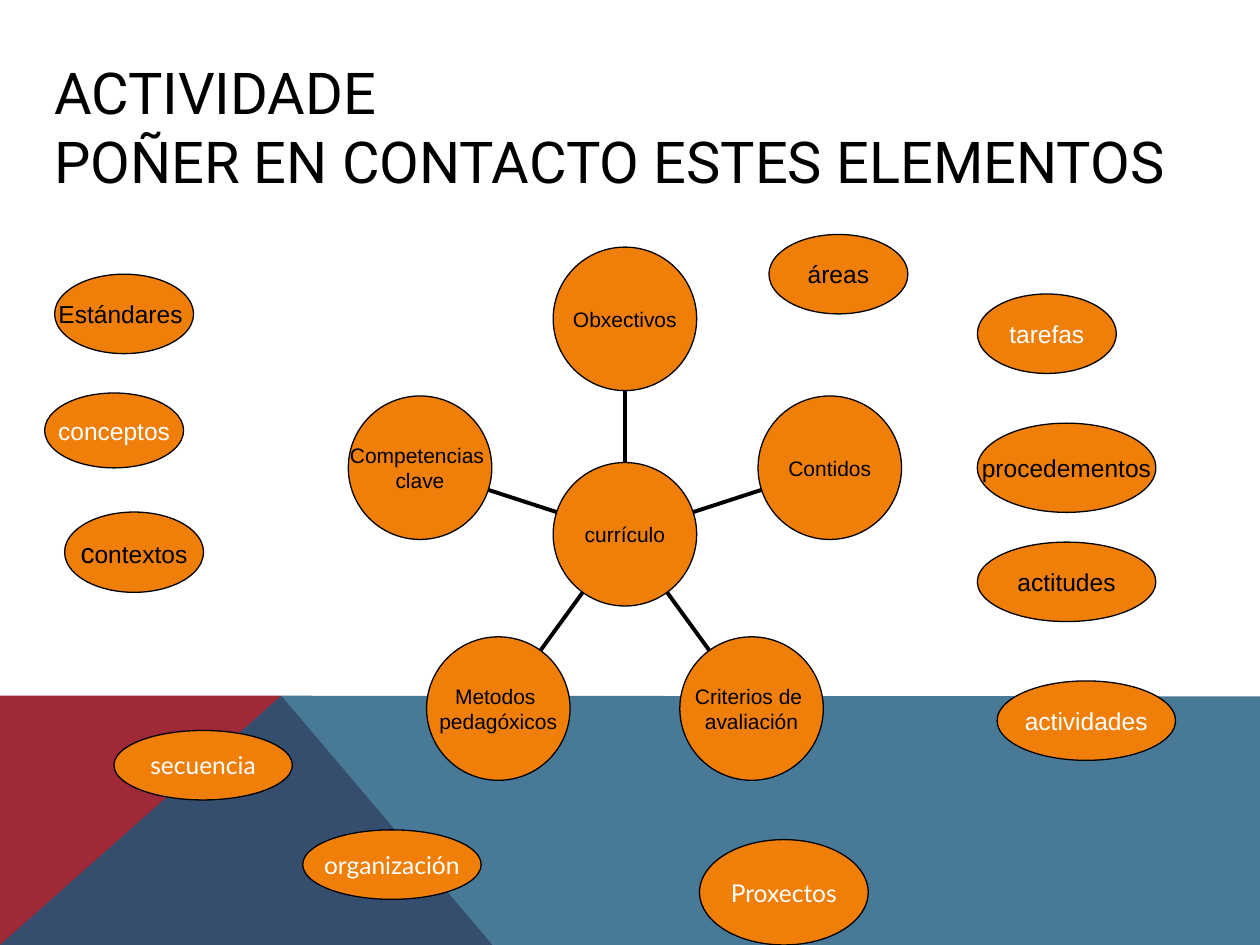
"""Build a slide of curriculum elements to be linked around a central hub."""
from dataclasses import dataclass
from math import cos, radians, sin

from lxml.etree import SubElement
from pptx import Presentation
from pptx.dml.color import RGBColor
from pptx.enum.shapes import MSO_CONNECTOR as CONN, MSO_SHAPE as SHAPE
from pptx.enum.text import MSO_ANCHOR as ANCHOR, PP_ALIGN as ALIGN
from pptx.oxml.ns import qn
from pptx.util import Pt

BLACK, WHITE, ORANGE = "000000", "FFFFFF", "F07F09"
HUB_X, HUB_Y, DIAMETER, ORBIT = 357.1, 305.3, 82, 123.1


@dataclass
class Oval:
    x: float
    y: float
    w: float
    h: float
    lines: tuple
    size: float = 14
    color: str = BLACK
    font: str = "Arial"
    inset: float = 3.6
    first_size: float = 0


@dataclass
class Band:
    points: list
    color: str
    alpha: int = 100


BANDS = [
    Band([(0, 540), (0, 397.6), (160.7, 397.6), (281.4, 540)], "9F2936"),
    Band([(0, 540), (160.7, 397.6), (720, 398), (720, 540)], "1B587C", 80),
]
SATELLITES = [
    ("Obxectivos",),
    ("Contidos",),
    ("Criterios de ", "avaliación"),
    ("Metodos ", "pedagóxicos"),
    ("Competencias ", "clave"),
]
OVALS = [
    Oval(558.5, 241.8, 102, 51, ("procedementos",)),
    Oval(558.5, 309.8, 102, 45.4, ("actitudes",)),
    Oval(36.9, 292.6, 79.4, 45.9, ("contextos",), first_size=16),
    Oval(31.2, 156.7, 79.4, 45.4, ("Estándares ",)),
    Oval(439.4, 134, 79.4, 45.4, ("áreas",)),
    Oval(25.5, 224.6, 79.4, 42.8, ("conceptos",), color=WHITE),
    Oval(558.5, 168, 79.4, 45.4, ("tarefas",), color=WHITE),
    Oval(569.8, 389.1, 102, 45.4, ("actividades",), color=WHITE),
    Oval(65.1, 417.4, 102, 39.7, ("secuencia",), color=WHITE, font="Lato"),
    Oval(173, 474.2, 102, 39.7, ("organización",), color=WHITE, font="Lato"),
    Oval(399.7, 479.8, 96.4, 60.2, ("Proxectos",), color=WHITE, font="Lato"),
]


def rgb(value: str) -> RGBColor:
    return RGBColor.from_string(value)


def apply(target, formats: dict) -> None:
    for name, value in formats.items():
        setattr(target, name, value)


def paint(sp, color: str) -> None:
    sp.shadow.inherit = False
    sp.fill.solid()
    sp.fill.fore_color.rgb = rgb(color)


def add_run(p, text: str, size: float, color: str, font: str) -> None:
    r = p.add_run()
    r.text = text
    apply(r.font, {"size": Pt(size), "name": font})
    r.font.color.rgb = rgb(color)


def add_band(s, band: Band) -> None:
    fb = s.shapes.build_freeform(*map(Pt, band.points[0]), scale=1.0)
    fb.add_line_segments([(Pt(x), Pt(y)) for x, y in band.points[1:]])
    sp = fb.convert_to_shape()
    paint(sp, band.color)
    sp.line.fill.background()
    if band.alpha < 100:
        clr = sp.fill._xPr.find(".//" + qn("a:srgbClr"))
        SubElement(clr, qn("a:alpha")).set("val", str(band.alpha * 1000))


def add_title(s, lines: tuple) -> None:
    tf = s.shapes.add_textbox(Pt(23.8), Pt(18), Pt(672.5), Pt(108)).text_frame
    apply(tf, {"word_wrap": True, "vertical_anchor": ANCHOR.MIDDLE})
    for i, line in enumerate(lines):
        p = tf.add_paragraph() if i else tf.paragraphs[0]
        add_run(p, line, 33, BLACK, "Roboto")


def add_spoke(s, dx: float, dy: float) -> None:
    inner, outer = DIAMETER / 2, ORBIT - DIAMETER / 2
    ends = [(HUB_X + d * dx, HUB_Y + d * dy) for d in (inner, outer)]
    line = s.shapes.add_connector(CONN.STRAIGHT, *(Pt(v) for end in ends for v in end))
    line.line.width = Pt(2.25)
    line.line.color.rgb = rgb(BLACK)
    SubElement(line._element.spPr, qn("a:effectLst"))


def add_oval(s, oval: Oval) -> None:
    sp = s.shapes.add_shape(SHAPE.OVAL, Pt(oval.x), Pt(oval.y), Pt(oval.w), Pt(oval.h))
    paint(sp, ORANGE)
    sp.line.width = Pt(0.75)
    sp.line.color.rgb = rgb(BLACK)
    tf = sp.text_frame
    apply(tf, {"word_wrap": False, "vertical_anchor": ANCHOR.MIDDLE,
               "margin_left": Pt(2 * oval.inset), "margin_right": Pt(2 * oval.inset),
               "margin_top": Pt(oval.inset), "margin_bottom": Pt(oval.inset)})
    for i, line in enumerate(oval.lines):
        p = tf.add_paragraph() if i else tf.paragraphs[0]
        p.alignment = ALIGN.CENTER
        if oval.first_size:
            add_run(p, line[0], oval.first_size, oval.color, oval.font)
            line = line[1:]
        add_run(p, line, oval.size, oval.color, oval.font)


def add_circle(s, cx: float, cy: float, lines: tuple) -> None:
    r = DIAMETER / 2
    add_oval(s, Oval(cx - r, cy - r, DIAMETER, DIAMETER, lines, size=12, inset=0))


def main() -> None:
    prs = Presentation()
    apply(prs, {"slide_width": Pt(720), "slide_height": Pt(540)})
    s = prs.slides.add_slide(prs.slide_layouts[6])
    for band in BANDS:
        add_band(s, band)
    add_title(s, ("ACTIVIDADE", "POÑER EN CONTACTO ESTES ELEMENTOS"))
    for i, lines in enumerate(SATELLITES):
        angle = radians(360 / len(SATELLITES) * i - 90)
        dx, dy = cos(angle), sin(angle)
        add_spoke(s, dx, dy)
        add_circle(s, HUB_X + ORBIT * dx, HUB_Y + ORBIT * dy, lines)
    add_circle(s, HUB_X, HUB_Y, ("currículo",))
    for oval in OVALS:
        add_oval(s, oval)
    prs.save("out.pptx")


if __name__ == "__main__":
    main()
